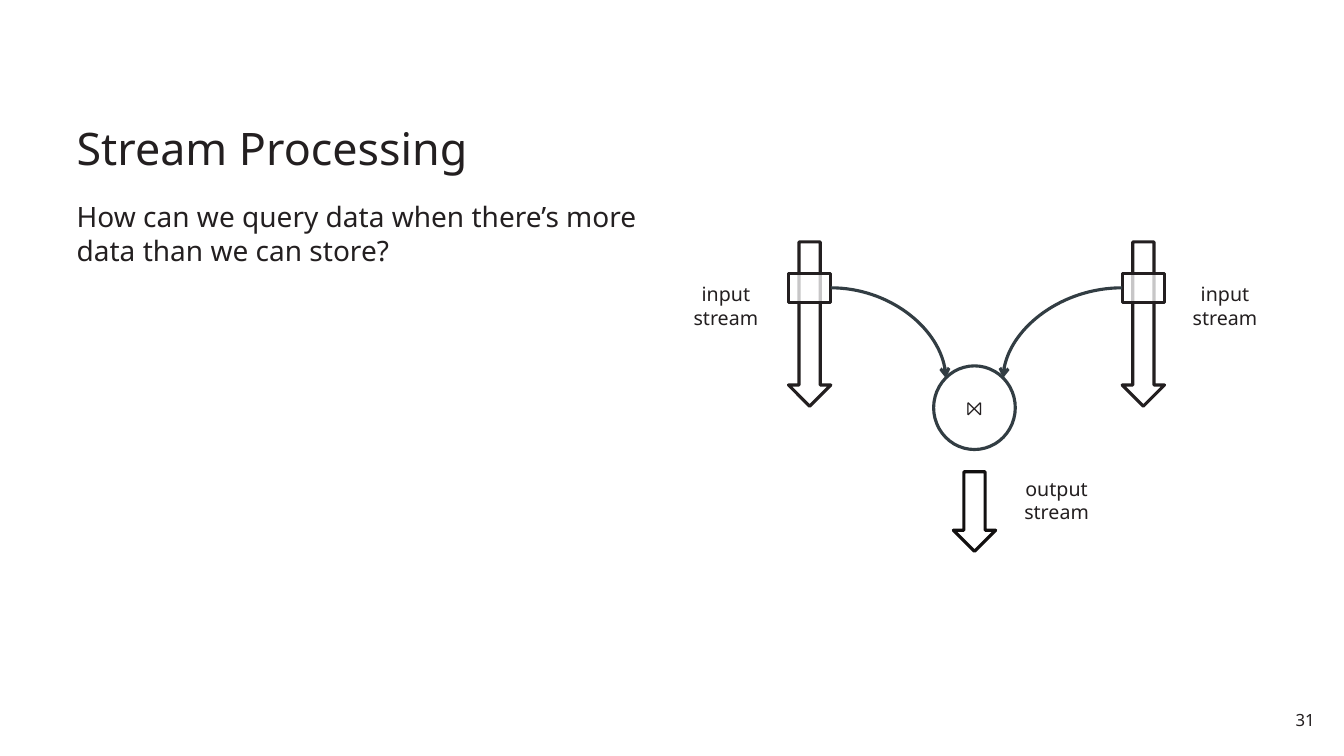
from lxml import etree
from pptx import Presentation
from pptx import util as u
from pptx.dml import color
from pptx.enum import shapes, text
from pptx.oxml import ns

FONT = "Noto Sans"
INK = "231F20"
SLATE = "323D43"
BLACK = "121010"
WHITE = "FFFFFF"

ARROW_WIDTH = 0.42
WINDOW_HEIGHT = 0.29


def rgb(value):
    return color.RGBColor.from_string(value)


def add_element(parent, tag, **attributes):
    return etree.SubElement(parent, ns.qn(tag), **attributes)


def place(shape, left, top, width, height):
    shape.left, shape.top = u.Inches(left), u.Inches(top)
    shape.width, shape.height = u.Inches(width), u.Inches(height)


def set_margins(frame, horizontal, vertical):
    frame.margin_left = frame.margin_right = u.Inches(horizontal)
    frame.margin_top = frame.margin_bottom = u.Inches(vertical)


def write(frame, lines, size, alignment):
    """Put one paragraph per line into the frame."""
    frame.text = "\n".join(lines)
    for paragraph in frame.paragraphs:
        paragraph.alignment = alignment
        for run in paragraph.runs:
            run.font.name = FONT
            run.font.size = u.Pt(size)
            run.font.color.rgb = rgb(INK)


def add_outlined(slide, preset, left, top, width, height, line=INK):
    shape = slide.shapes.add_shape(
        preset, u.Inches(left), u.Inches(top), u.Inches(width), u.Inches(height))
    shape.shadow.inherit = False
    shape.fill.solid()
    shape.fill.fore_color.rgb = rgb(WHITE)
    shape.line.color.rgb = rgb(line)
    shape.line.width = u.Pt(2.25)
    return shape


def add_label(slide, lines, left, top):
    label = slide.shapes.add_textbox(
        u.Inches(left), u.Inches(top), u.Inches(0.86), u.Inches(0.57))
    label.text_frame.word_wrap = False
    write(label.text_frame, lines, 14, text.PP_ALIGN.CENTER)


def add_input_stream(slide, left, top, label_offset):
    """Draw a stream arrow with its translucent window and its label."""
    add_outlined(slide, shapes.MSO_SHAPE.DOWN_ARROW, left, top, ARROW_WIDTH, 1.63)
    window = add_outlined(slide, shapes.MSO_SHAPE.RECTANGLE,
                          left, top + 0.31, ARROW_WIDTH, WINDOW_HEIGHT)
    window_color = window.fill._xPr.find(ns.qn("a:solidFill"))[0]
    add_element(window_color, "a:alpha", val="75000")
    add_label(slide, ["input", "stream"], left + label_offset, top + 0.35)


def add_curve(slide, start_x, start_y, end_x, end_y):
    curve = slide.shapes.add_connector(
        shapes.MSO_CONNECTOR.CURVE, u.Inches(start_x), u.Inches(start_y),
        u.Inches(end_x), u.Inches(end_y))
    curve.line.color.rgb = rgb(SLATE)
    curve.line.width = u.Pt(2.25)
    properties = curve._element.spPr
    properties.find(ns.qn("a:prstGeom")).set("prst", "curvedConnector2")
    add_element(properties.find(ns.qn("a:ln")), "a:tailEnd", type="arrow")
    add_element(properties, "a:effectLst")


def add_join(slide, left, top, width, height):
    circle = add_outlined(slide, shapes.MSO_SHAPE.OVAL, left, top, width, height, SLATE)
    frame = circle.text_frame
    frame.word_wrap = False
    frame.vertical_anchor = text.MSO_ANCHOR.MIDDLE
    set_margins(frame, 0, 0)
    write(frame, ["⨝"], 14, text.PP_ALIGN.CENTER)


def add_stream_diagram(slide, left, top):
    """Draw two input streams that meet in a join with one output stream."""
    first, second = left + 1.05, left + 4.36
    join_left, join_top, join_width = left + 2.49, top + 1.23, 0.81
    join_center = join_left + join_width / 2
    window_middle = top + 0.31 + WINDOW_HEIGHT / 2

    add_input_stream(slide, first, top, -1.05)
    add_input_stream(slide, second, top, 0.59)
    add_join(slide, join_left, join_top, join_width, 0.83)
    for start, side in ((first + ARROW_WIDTH, -1), (second, 1)):
        add_curve(slide, start, window_middle, join_center + side * 0.285, join_top + 0.12)

    add_outlined(slide, shapes.MSO_SHAPE.DOWN_ARROW, join_center - ARROW_WIDTH / 2,
                 top + 2.28, ARROW_WIDTH, 0.79, BLACK)
    add_label(slide, ["output", "stream"], left + 3.28, top + 2.28)


def fill_title(title, left, top, width, height):
    place(title, left, top, width, height)
    frame = title.text_frame
    frame.auto_size = text.MSO_AUTO_SIZE.NONE
    frame.vertical_anchor = text.MSO_ANCHOR.BOTTOM
    set_margins(frame, 0.08, 0.04)
    write(frame, ["Stream Processing"], 32, text.PP_ALIGN.LEFT)
    frame.paragraphs[0].line_spacing = 0.9


def fill_question(body, left, top, width, height):
    place(body, left, top, width, height)
    frame = body.text_frame
    frame.auto_size = text.MSO_AUTO_SIZE.NONE
    set_margins(frame, 0.08, 0.04)
    write(frame, ["How can we query data when there’s more data than we can store?"],
          20, text.PP_ALIGN.LEFT)
    paragraph = frame.paragraphs[0]
    paragraph.space_before = u.Pt(0)
    properties = paragraph._p.get_or_add_pPr()
    properties.set("marL", "0")
    properties.set("indent", "0")
    add_element(properties, "a:buNone")


def add_page_number(slide, left, top, width, height):
    number = slide.shapes.add_textbox(
        u.Inches(left), u.Inches(top), u.Inches(width), u.Inches(height))
    number.text_frame.word_wrap = True
    set_margins(number.text_frame, 0.08, 0.06)
    write(number.text_frame, ["31"], 12, text.PP_ALIGN.RIGHT)


def main():
    presentation = Presentation()
    presentation.slide_width = u.Inches(13.33)
    presentation.slide_height = u.Inches(7.5)
    slide = presentation.slides.add_slide(presentation.slide_layouts[1])
    fill_title(slide.shapes.title, 0.68, 0.76, 11.97, 1.02)
    fill_question(slide.placeholders[1], 0.68, 1.94, 5.91, 4.88)
    add_stream_diagram(slide, 6.77, 2.4)
    add_page_number(slide, 12.65, 6.98, 0.47, 0.31)
    presentation.save("out.pptx")


if __name__ == "__main__":
    main()
